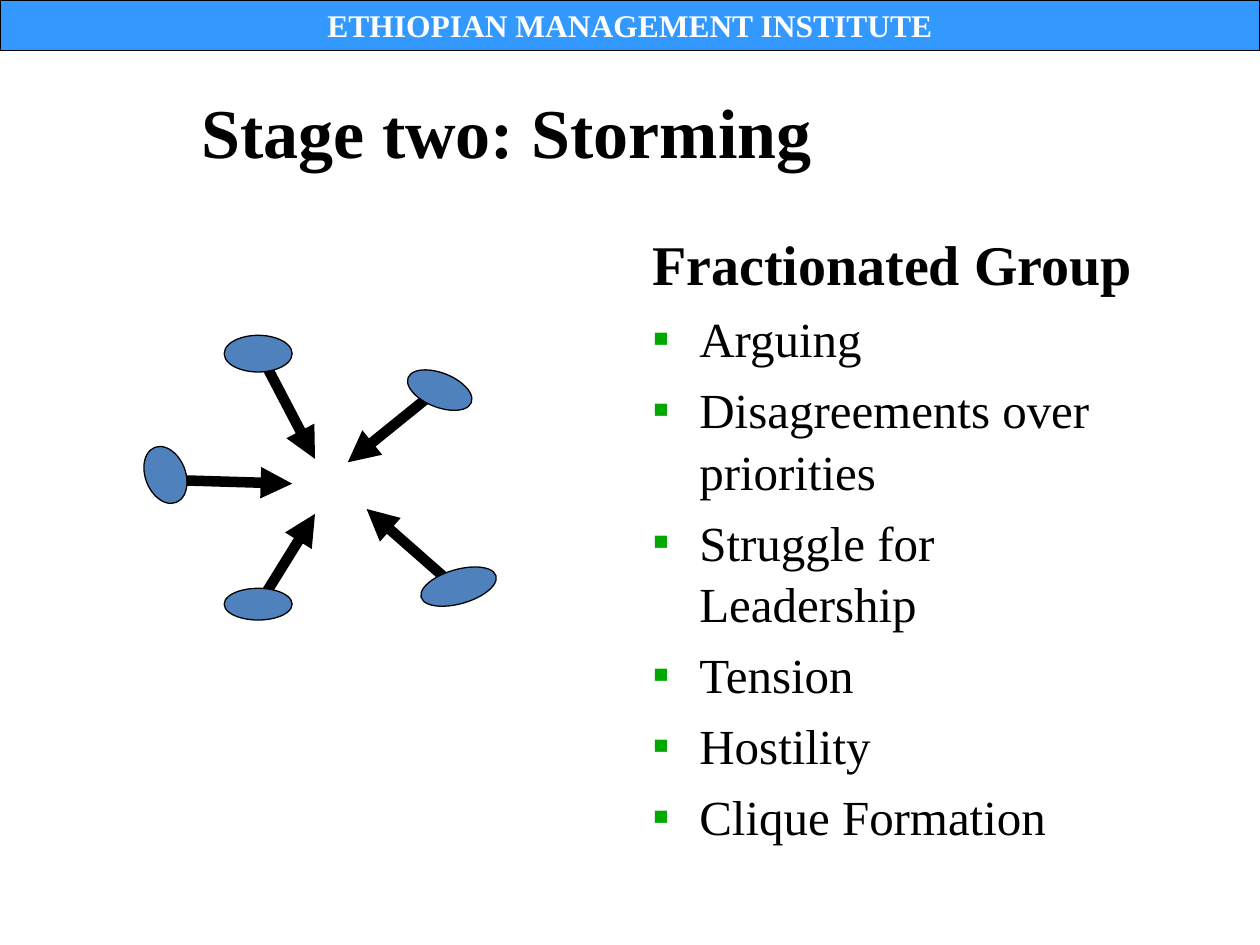
from lxml.etree import SubElement
from pptx import Presentation
from pptx.dml.color import RGBColor
from pptx.enum.shapes import MSO_CONNECTOR as Link, MSO_SHAPE as Kind
from pptx.enum.text import MSO_ANCHOR as Anchor, PP_ALIGN as Align
from pptx.oxml.ns import qn
from pptx.util import Cm, Pt

HEADER = "ETHIOPIAN MANAGEMENT INSTITUTE"
TITLE = "Stage two: Storming"
HEADING = "Fractionated Group"
SIGNS = [
    "Arguing",
    "Disagreements over priorities",
    "Struggle for Leadership",
    "Tension",
    "Hostility",
    "Clique Formation",
]
# Each member: oval (left, top, width, height), turn, arrow start, arrow end
MEMBERS = [
    ((8.46, 11.48, 1.57, 0.69), -16, (9.04, 11.71), (7.39, 10.26)),
    ((4.52, 11.86, 1.37, 0.64), 0, (5.31, 12.04), (6.35, 10.36)),
    ((2.74, 9.17, 1.19, 0.81), 68.9, (3.56, 9.68), (5.89, 9.75)),
    ((4.52, 6.76, 1.37, 0.74), 0, (5.31, 7.26), (6.35, 9.25)),
    ((8.18, 7.52, 1.37, 0.69), 21.6, (8.64, 8.0), (7.01, 9.32)),
]
INDENT = Cm(0.95)


def color(code):
    return RGBColor.from_string(code)


def write(para, text, size, bold=False, ink="000000", align=Align.LEFT,
          before=0, lines=None, bullet=None):
    para.alignment = align
    para.space_before = Pt(before)
    para.line_spacing = lines
    if bullet:
        props = para._p.get_or_add_pPr()
        tint = SubElement(props, qn("a:buClr"))
        SubElement(tint, qn("a:srgbClr"), val="00A800")
        SubElement(props, qn("a:buFont"), typeface="Times New Roman")
        SubElement(props, qn("a:buChar"), char=bullet)
    run = para.add_run()
    run.text = text
    font = run.font
    font.name, font.size, font.bold = "Times New Roman", Pt(size), bold
    font.color.rgb = color(ink)


def draw(kind, box, fill):
    shape = slide.shapes.add_shape(kind, *map(Cm, box))
    shape.shadow.inherit = False
    shape.fill.solid()
    shape.fill.fore_color.rgb = color(fill)
    shape.line.color.rgb = color("000000")
    shape.line.width = Pt(0.75)
    return shape


def arrow(start, end):
    link = slide.shapes.add_connector(Link.STRAIGHT, *map(Cm, start + end))
    link.line.color.rgb = color("000000")
    link.line.width = Pt(6)
    SubElement(link.line._get_or_add_ln(), qn("a:tailEnd"), type="triangle")
    SubElement(link._element.spPr, qn("a:effectLst"))


deck = Presentation()
deck.slide_width, deck.slide_height = Cm(25.4), Cm(19.05)
slide = deck.slides.add_slide(deck.slide_layouts[5])

banner = draw(Kind.RECTANGLE, (0, 0, 25.4, 1.02), "3399FF")
banner.text_frame.vertical_anchor = Anchor.MIDDLE
write(banner.text_frame.paragraphs[0], HEADER, 18, bold=True,
      ink="FFFFFF", align=Align.CENTER)

title = slide.shapes.title
title.left, title.top, title.width, title.height = map(
    Cm, (3.81, 1.47, 21.59, 2.34))
title.text_frame.vertical_anchor = Anchor.MIDDLE
write(title.text_frame.paragraphs[0], TITLE, 40, bold=True)

body = slide.shapes.add_textbox(*map(Cm, (12.9, 4.45, 10.8, 12.5)))
frame = body.text_frame
frame.word_wrap = True
write(frame.paragraphs[0], HEADING, 32, bold=True, lines=1.04)
for sign in SIGNS:
    para = frame.add_paragraph()
    props = para._p.get_or_add_pPr()
    props.set("marL", str(INDENT))
    props.set("indent", str(-INDENT))
    write(para, sign, 28, before=5.6, lines=1.04, bullet="▪")

for box, turn, start, end in MEMBERS:
    arrow(start, end)
    draw(Kind.OVAL, box, "4F81BD").rotation = turn

deck.save("out.pptx")
